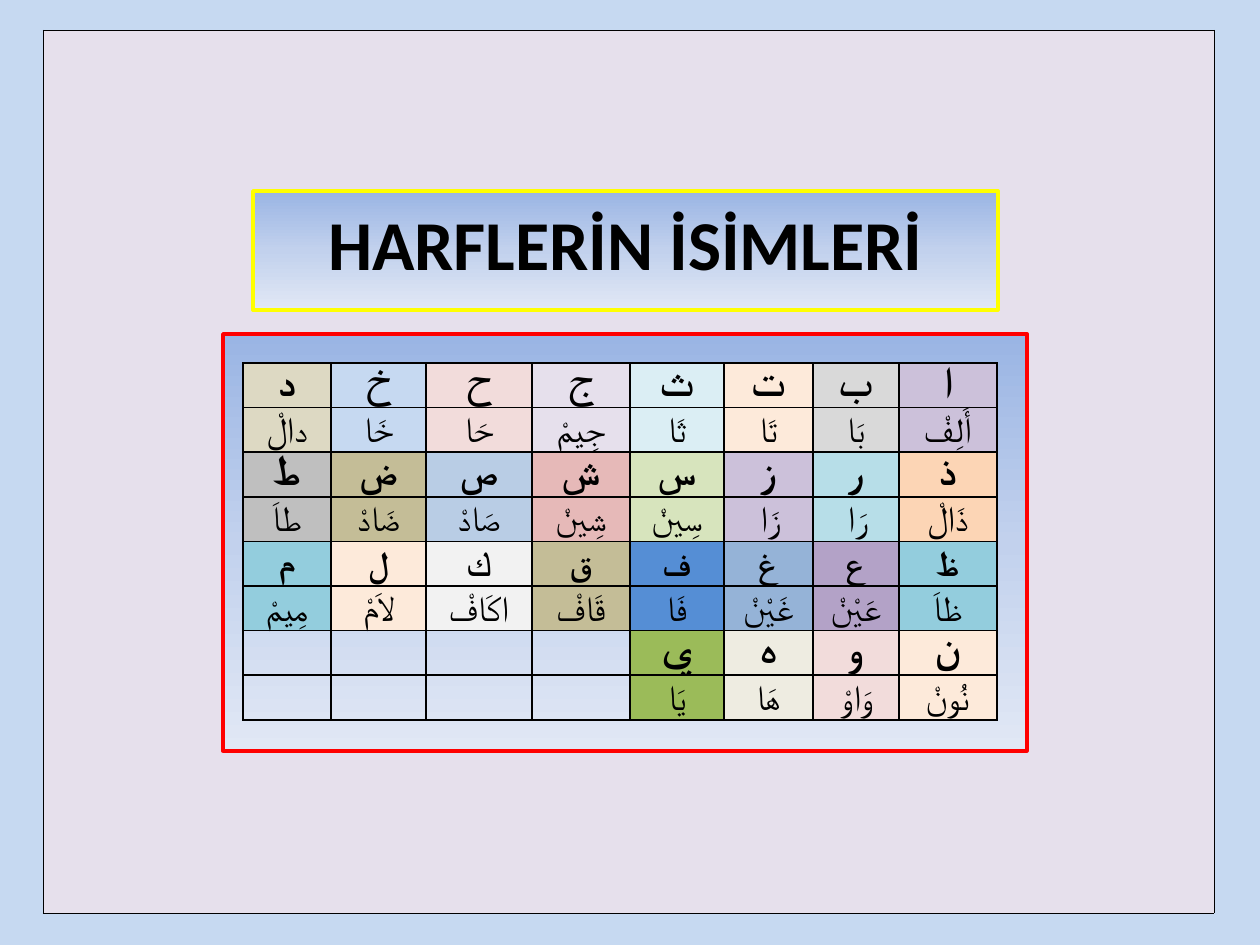
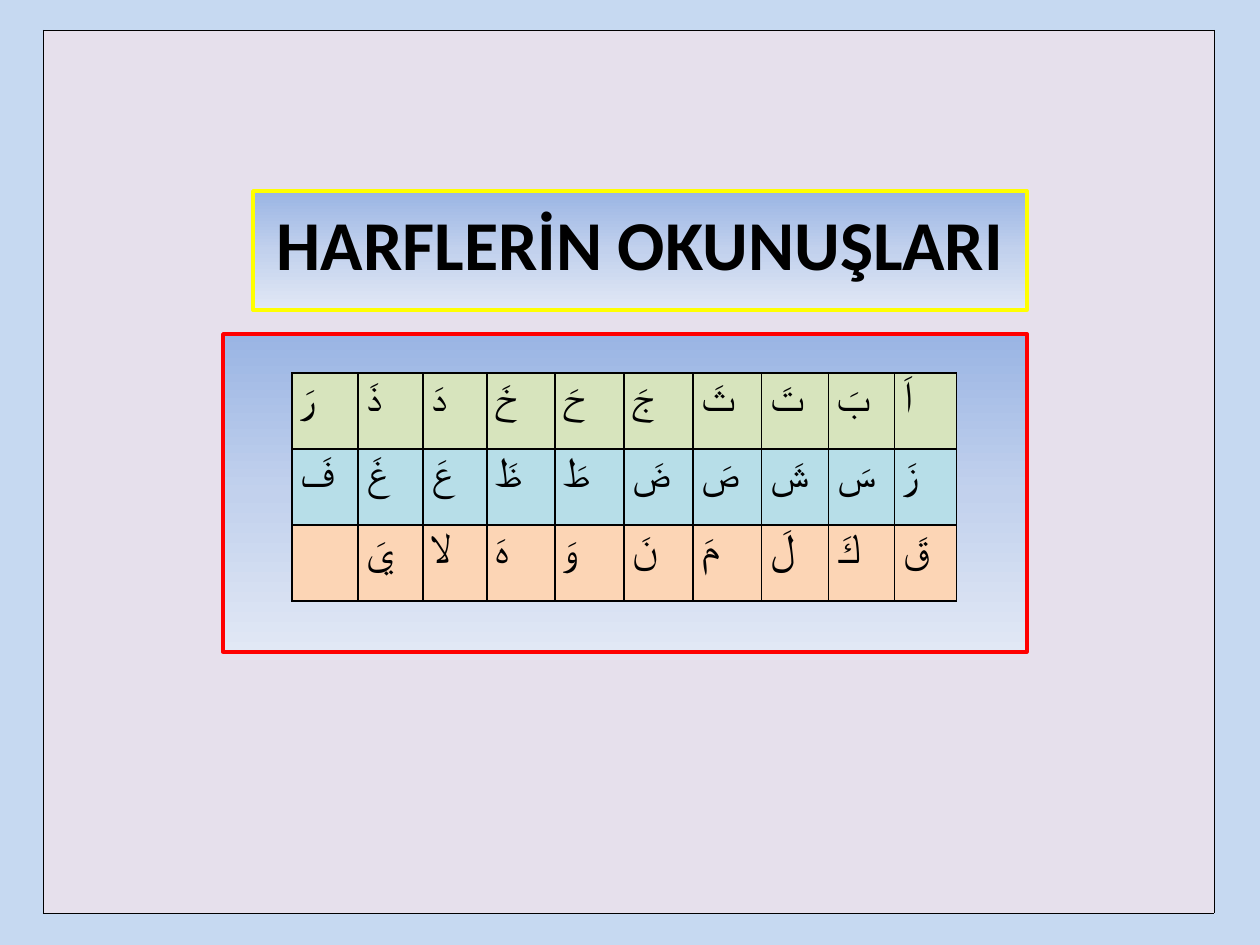
from copy import deepcopy

from lxml import etree
from pptx import Presentation
from pptx.dml.color import RGBColor
from pptx.enum.shapes import MSO_SHAPE
from pptx.enum.text import MSO_ANCHOR, MSO_AUTO_SIZE, PP_ALIGN
from pptx.oxml.ns import qn
from pptx.util import Emu, Pt

PX = 914400 / 126
FONT = "Calibri"
RECT = MSO_SHAPE.RECTANGLE
LEFT, CENTER = PP_ALIGN.LEFT, PP_ALIGN.CENTER
TOP, MIDDLE, BOTTOM = MSO_ANCHOR.TOP, MSO_ANCHOR.MIDDLE, MSO_ANCHOR.BOTTOM
NO_AUTOFIT = MSO_AUTO_SIZE.NONE

BLACK = RGBColor(0x00, 0x00, 0x00)
YELLOW = RGBColor(0xFF, 0xFF, 0x00)
RED = RGBColor(0xFF, 0x00, 0x00)
PAGE_BLUE = RGBColor(0xC6, 0xD9, 0xF1)
FRAME_LILAC = RGBColor(0xE6, 0xE0, 0xEC)
GRADIENT = [
    (0, RGBColor(0x9A, 0xB5, 0xE4)),
    (0.5, RGBColor(0xC2, 0xD1, 0xED)),
    (1, RGBColor(0xE1, 0xE8, 0xF5)),
]

# Letters, their names, the letter size and the column fills of each band
NAME_BANDS = [
    ("د خ ح ج ث ت ب ا", "دالْ خَا حَا جِيمْ ثَا تَا بَا أَلِفْ", 24,
     "DDD9C3 C6D9F1 F2DCDB E6E0EC DBEEF4 FDEADA D9D9D9 CCC1DA"),
    ("ط ض ص ش س ز ر ذ", "طاَ ضَادْ صَادْ شِينْ سِينْ زَا رَا ذَالْ", 24,
     "BFBFBF C4BD97 B9CDE5 E6B9B8 D7E4BD CCC1DA B7DEE8 FCD5B5"),
    ("م ل ك ق ف غ ع ظ", "مِيمْ لاَمْ اكَافْ قَافْ فَا غَيْنْ عَيْنْ ظاَ", 20,
     "93CDDD FDEADA F2F2F2 C4BD97 558ED5 95B3D7 B3A2C7 93CDDD"),
    ("ي ه و ن", "يَا هَا وَاوْ نُونْ", 24,
     "9BBB59 EEECE1 F2DCDB FDEADA"),
]
READING_BANDS = [
    ("رَ ذَ دَ خَ حَ جَ ثَ تَ بَ اَ", "D7E4BD"),
    ("فَ غَ عَ ظَ طَ ضَ صَ شَ سَ زَ", "B7DEE8"),
    ("يَ لا هَ وَ نَ مَ لَ كَ قَ", "FCD5B5"),
]

# Each row: texts, fills, size, bold; short rows are filled from the right
name_rows = []
for letters, names, size, fills in NAME_BANDS:
    name_rows.append((letters.split(), fills.split(), size, True))
    name_rows.append((names.split(), fills.split(), 20, False))
reading_rows = [(texts.split(), [fill] * 10, 24, False)
                for texts, fill in READING_BANDS]

# Title, title width, panel height, table left, top, height, column widths,
# rows, alignment, anchor
SLIDES = [
    ("HARFLERİN İSİMLERİ", 745, 417, 243, 363, 357,
     [88, 95, 106, 98, 94, 89, 86, 98], name_rows, CENTER, BOTTOM),
    ("HARFLERİN OKUNUŞLARI", 774, 318, 292, 373, 228,
     [66, 65, 64, 68, 69, 69, 69, 67, 66, 62], reading_rows, LEFT, MIDDLE),
]


def px(n):
    return Emu(round(n * PX))


def add_grid(s, left, top, widths, height, row_count, border):
    """Add a table with equal rows, no banding and black cell borders."""
    tbl = s.shapes.add_table(row_count, len(widths), px(left), px(top),
                             px(sum(widths)), px(height)).table
    tbl.first_row = tbl.horz_banding = False
    for col, width in zip(tbl.columns, widths):
        col.width = px(width)
    for row in tbl.rows:
        row.height = px(height / row_count)
    for cell in tbl.iter_cells():
        cell.fill.background()
        tc_pr = cell._tc.get_or_add_tcPr()
        for i, side in enumerate(("a:lnL", "a:lnR", "a:lnT", "a:lnB")):
            ln = etree.Element(qn(side), w=str(Pt(border)))
            fill = etree.SubElement(ln, qn("a:solidFill"))
            etree.SubElement(fill, qn("a:srgbClr"), val=str(BLACK))
            tc_pr.insert(i, ln)
    return tbl


prs = Presentation()
prs.slide_width, prs.slide_height = px(1260), px(945)
background = prs.slide_master.background.fill
background.solid()
background.fore_color.rgb = PAGE_BLUE

for (heading, title_width, panel_height, left, top, height,
     widths, rows, align, anchor) in SLIDES:
    s = prs.slides.add_slide(prs.slide_layouts[5])

    frame = add_grid(s, 43, 30, [1171], 883, 1, 0.25).cell(0, 0)
    frame.fill.solid()
    frame.fill.fore_color.rgb = FRAME_LILAC

    # The title has to lie in front of the page frame
    title = s.shapes.title
    s.shapes.element.append(title.element)
    title.left, title.top = px(253), px(191)
    title.width, title.height = px(title_width), px(119)
    panel = s.shapes.add_shape(RECT, px(223), px(334), px(804),
                               px(panel_height))
    panel.shadow.inherit = False
    for sp, color in ((title, YELLOW), (panel, RED)):
        sp.fill.gradient()
        sp.fill.gradient_angle = 270
        gs_list = sp.element.spPr.find(".//" + qn("a:gsLst"))
        gs_list.append(deepcopy(gs_list[-1]))
        for stop, (position, shade) in zip(sp.fill.gradient_stops, GRADIENT):
            stop.position = position
            stop.color.rgb = shade
        sp.line.color.rgb = color
        sp.line.width = Pt(2)

    tf = title.text_frame
    tf.word_wrap = True
    tf.auto_size = NO_AUTOFIT
    tf.vertical_anchor = TOP
    tf.margin_top = px(10)
    p = tf.paragraphs[0]
    p.alignment = CENTER
    r = p.add_run()
    r.text = heading
    r.font.name, r.font.size, r.font.bold = FONT, Pt(40), True
    r.font.color.rgb = BLACK

    tbl = add_grid(s, left, top, widths, height, len(rows), 1)
    for y, (texts, fills, size, bold) in enumerate(rows):
        for x in range(len(widths)):
            cell = tbl.cell(y, x)
            cell.margin_left = cell.margin_right = px(9)
            cell.margin_top = cell.margin_bottom = 0
            cell.vertical_anchor = anchor
            p = cell.text_frame.paragraphs[0]
            p.alignment = align
            p.line_spacing = Pt(14)
            fill_at = x - len(widths) + len(fills)
            text_at = x - len(widths) + len(texts)
            if fill_at >= 0:
                cell.fill.solid()
                cell.fill.fore_color.rgb = RGBColor.from_string(fills[fill_at])
            if text_at >= 0:
                r = p.add_run()
                r.text = texts[text_at]
                r.font.name, r.font.size, r.font.bold = FONT, Pt(size), bold
                r.font.color.rgb = BLACK
                etree.SubElement(r.font._element, qn("a:cs"), typeface=FONT)

prs.save("out.pptx")
